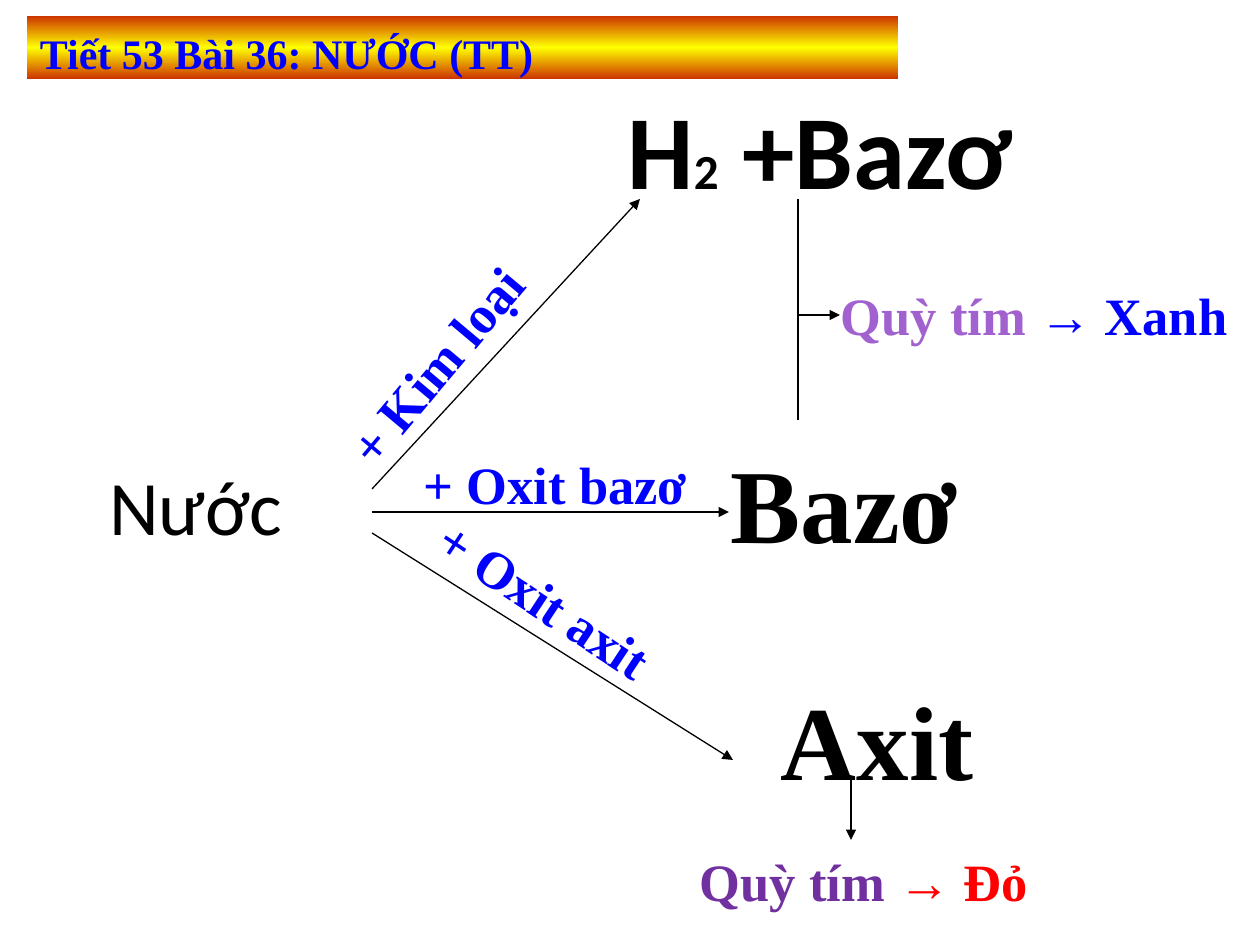
from copy import deepcopy
from dataclasses import dataclass

from lxml.etree import SubElement
from pptx import Presentation
from pptx.dml.color import RGBColor
from pptx.enum.shapes import MSO_CONNECTOR, MSO_SHAPE
from pptx.enum.text import MSO_ANCHOR, MSO_AUTO_SIZE, PP_ALIGN
from pptx.oxml.ns import qn
from pptx.util import Emu, Pt

PX_PER_INCH = 126


@dataclass(frozen=True)
class Theme:
    sans: str = "Calibri"
    serif: str = "Times New Roman"
    ink: str = "000000"
    blue: str = "0000FF"
    red: str = "FF0000"
    purple: str = "7030A0"
    lilac: str = "A162D0"
    banner_edge: str = "CC3300"
    banner_middle: str = "FFFF00"
    product: int = 60
    source: int = 44
    label: int = 30
    subscript: int = 28
    banner: int = 24
    line: float = 0.75


THEME = Theme()


def px(length):
    return Emu(round(length * 914400 / PX_PER_INCH))


def place(shape, box):
    shape.left, shape.top, shape.width, shape.height = map(px, box)


def write(shape, spans, font, align=PP_ALIGN.LEFT, anchor=MSO_ANCHOR.TOP, inset=(13, 6)):
    """Fill a shape with one bold paragraph of (text, size, colour) spans."""
    frame = shape.text_frame
    frame.word_wrap = True
    frame.auto_size = MSO_AUTO_SIZE.NONE
    frame.vertical_anchor = anchor
    frame.margin_left, frame.margin_top = map(px, inset)
    para = frame.paragraphs[0]
    para.alignment = align
    para.space_before = Pt(0)
    for text, size, color in spans:
        span = para.add_run()
        span.text = text
        span.font.name = font
        span.font.size = Pt(size)
        span.font.bold = True
        span.font.color.rgb = RGBColor.from_string(color)


def add_label(page, box, spans, rotation=0, indent=0):
    label = page.shapes.add_textbox(*map(px, box))
    label.rotation = rotation
    drop = spans[0][1] // 5
    write(label, spans, THEME.serif, inset=(13 + indent, 6 + drop))


def add_line(page, start, end, arrow=True):
    line = page.shapes.add_connector(MSO_CONNECTOR.STRAIGHT, *map(px, start + end))
    line.line.color.rgb = RGBColor.from_string(THEME.ink)
    line.line.width = Pt(THEME.line)
    properties = line._element.spPr
    if arrow:
        SubElement(properties.find(qn("a:ln")), qn("a:tailEnd"), type="triangle")
    SubElement(properties, qn("a:effectLst"))


def add_banner(page, box):
    banner = page.shapes.add_shape(MSO_SHAPE.RECTANGLE, *map(px, box))
    banner.shadow.inherit = False
    banner.line.fill.background()
    banner.fill.gradient()
    banner.fill.gradient_angle = 90
    stops = banner._element.spPr.find(".//" + qn("a:gsLst"))
    stops.append(deepcopy(stops[-1]))
    colors = (THEME.banner_edge, THEME.banner_middle, THEME.banner_edge)
    for index, (stop, color) in enumerate(zip(banner.fill.gradient_stops, colors)):
        stop.position = index / 2
        stop.color.rgb = RGBColor.from_string(color)
    write(banner, [("Tiết 53 Bài 36: NƯỚC (TT)", THEME.banner, THEME.blue)],
          THEME.serif, inset=(13, 11))


def add_source(page, box):
    title = page.shapes.title
    place(title, box)
    write(title, [("Nước ", THEME.source, THEME.ink)], THEME.sans,
          PP_ALIGN.CENTER, MSO_ANCHOR.MIDDLE)
    title.text_frame.paragraphs[0].runs[0].font.bold = False


def add_reactions(page, box):
    """Arrows that fan out from water, each with its reagent."""
    left, top = box
    rays = [((0, 290), (268, 0)), ((0, 313), (357, 313)), ((0, 334), (361, 561))]
    for (x1, y1), (x2, y2) in rays:
        add_line(page, (left + x1, top + y1), (left + x2, top + y2))
    reagents = [
        ("+ Kim loại", (-80, -14, 567, 198), 310, 0),
        ("+ Oxit bazơ", (39, 241, 567, 242), 0, 0),
        ("+ Oxit axit", (-3, 408, 494, 136), 33.4, 13),
    ]
    for text, (x, y, width, height), rotation, indent in reagents:
        add_label(page, (left + x, top + y, width, height),
                  [(text, THEME.label, THEME.blue)], rotation, indent)


def add_products(page, box):
    left, top = box
    hydrogen = page.placeholders[1]
    place(hydrogen, (left, top, 567, 242))
    write(hydrogen, [("H", THEME.product, THEME.ink),
                     ("2", THEME.subscript, THEME.ink),
                     (" +Bazơ", THEME.product, THEME.ink)],
          THEME.sans, PP_ALIGN.CENTER, inset=(13, 13))
    for text, x, y, width, height in (("Bazơ", 182, 348, 388, 158),
                                      ("Axit", 232, 586, 567, 242)):
        add_label(page, (left + x, top + y, width, height),
                  [(text, THEME.product, THEME.ink)])


def add_litmus_tests(page, box):
    left, top = box
    add_line(page, (left, top), (left, top + 221), arrow=False)
    add_line(page, (left, top + 116), (left + 42, top + 116))
    add_line(page, (left + 53, top + 578), (left + 53, top + 641))
    results = [
        (30, 72, THEME.lilac, "→ Xanh", THEME.blue),
        (-111, 638, THEME.purple, "→ Đỏ", THEME.red),
    ]
    for x, y, paper, result, color in results:
        add_label(page, (left + x, top + y, 567, 242),
                  [("Quỳ tím ", THEME.label, paper), (result, THEME.label, color)])


def main():
    deck = Presentation()
    deck.slide_width, deck.slide_height = px(1260), px(945)
    page = deck.slides.add_slide(deck.slide_layouts[0])
    add_source(page, (42, 410, 325, 189))
    add_products(page, (536, 72))
    add_reactions(page, (372, 199))
    add_litmus_tests(page, (798, 199))
    add_banner(page, (27, 16, 871, 63))
    deck.save("out.pptx")


if __name__ == "__main__":
    main()
